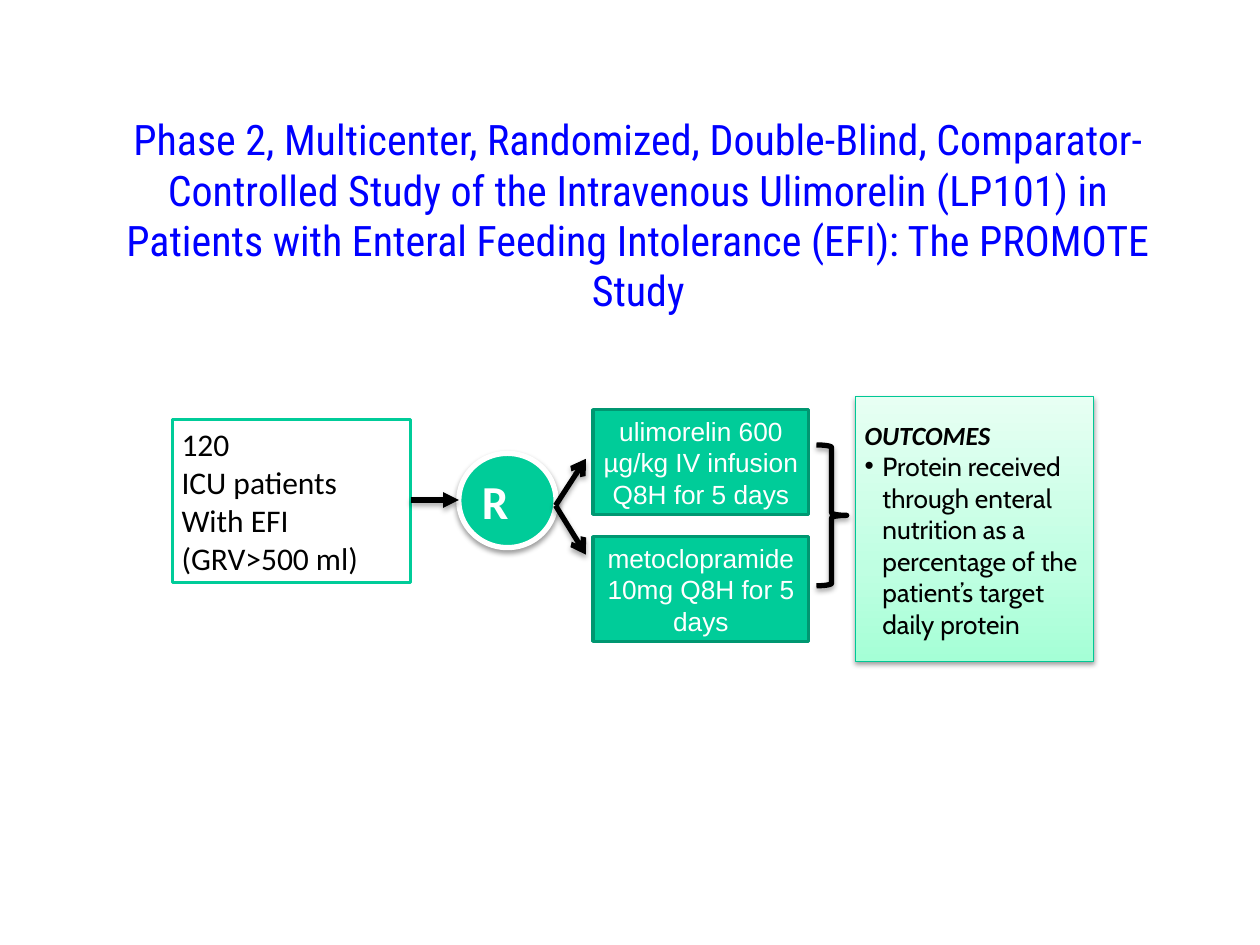
import pptx
import pptx.dml.color
import pptx.enum.shapes
import pptx.enum.text
import pptx.oxml
import pptx.oxml.ns
import pptx.util

Cm, Pt = pptx.util.Cm, pptx.util.Pt
SHAPE = pptx.enum.shapes.MSO_SHAPE
ALIGN = pptx.enum.text.PP_ALIGN
ANCHOR = pptx.enum.text.MSO_ANCHOR
qn = pptx.oxml.ns.qn
NAMESPACE = 'xmlns:a="http://schemas.openxmlformats.org/drawingml/2006/main"'

COLORS = {
    "title": "0000FF", "green": "00CC99", "dark green": "009771",
    "outcome line": "00C896", "black": "000000", "white": "FFFFFF",
}
OUTCOME_GRADIENT = [(0, "A5FFD6"), (35, "BFFFE2"), (100, "E7FFF3")]

# Content
TITLE = ("Phase 2, Multicenter, Randomized, Double-Blind, Comparator-Controlled "
         "Study of the Intravenous Ulimorelin (LP101) in Patients with Enteral "
         "Feeding Intolerance (EFI): The PROMOTE Study")
POPULATION = ["120", "ICU patients", "With EFI", "(GRV>500 ml)"]
ARMS = ["ulimorelin 600 µg/kg IV infusion Q8H for 5 days",
        "metoclopramide 10mg Q8H for 5 days"]
OUTCOMES = ["OUTCOMES",
            "Protein received through enteral nutrition as a percentage of "
            "the patient’s target daily protein"]

# Layout in centimetres: left, top, width, height
TITLE_BOX = (1.7, 2.16, 22.33, 5.51)
POPULATION_BOX = (3.48, 8.46, 4.8, 3.28)
RANDOM_CIRCLE = (9.25, 9.14, 1.96, 1.9)
FIRST_ARM_BOX = (11.96, 8.26, 4.34, 2.11)
ARM_STEP = 2.56
BRACE_BOX = (16.46, 8.97, 0.61, 2.84)
OUTCOME_BOX = (17.25, 8, 4.8, 5.33)
FORK = (11.2, 10.19)
ARROWS = [  # start, end, head
    (FORK, (11.81, 9.25), "arrow"),
    (FORK, (11.81, 11.18), "arrow"),
    ((8.28, 10.08), (9.25, 10.08), "triangle"),
]


def rgb(name):
    return pptx.dml.color.RGBColor.from_string(COLORS[name])


def add_shadow(properties, distance, opacity):
    effects = properties.find(qn("a:effectLst"))
    if effects is None:
        effects = pptx.oxml.parse_xml(f"<a:effectLst {NAMESPACE}/>")
        properties.append(effects)
    effects.append(pptx.oxml.parse_xml(
        f'<a:outerShdw {NAMESPACE} blurRad="{Pt(3.1)}" dist="{Pt(distance)}" '
        f'dir="5400000" rotWithShape="0"><a:srgbClr val="{COLORS["black"]}">'
        f'<a:alpha val="{opacity * 1000}"/></a:srgbClr></a:outerShdw>'))


def add_box(kind, box, fill, line, line_width):
    shape = slide.shapes.add_shape(kind, *map(Cm, box))
    shape.shadow.inherit = False
    if fill:
        shape.fill.solid()
        shape.fill.fore_color.rgb = rgb(fill)
    else:
        shape.fill.background()
    shape.line.color.rgb = rgb(line)
    shape.line.width = Pt(line_width)
    return shape


def write(shape, lines, size, color, font="Calibri", align=ALIGN.LEFT):
    frame = shape.text_frame
    frame.word_wrap = True
    frame.vertical_anchor = ANCHOR.MIDDLE
    frame.margin_left = frame.margin_right = Cm(0.18)
    frame.margin_top = frame.margin_bottom = Cm(0.1)
    frame.text = "\n".join(lines)
    for paragraph in frame.paragraphs:
        paragraph.alignment = align
        paragraph.font.size = Pt(size)
        paragraph.font.name = font
        paragraph.font.color.rgb = rgb(color)
    return frame.paragraphs


presentation = pptx.Presentation()
presentation.slide_width, presentation.slide_height = Cm(25.4), Cm(19.05)
slide = presentation.slides.add_slide(presentation.slide_layouts[5])

# Title
title = slide.shapes.title
title.left, title.top, title.width, title.height = map(Cm, TITLE_BOX)
write(title, [TITLE], 24, "title", "Roboto Condensed", ALIGN.CENTER)
title.text_frame.vertical_anchor = ANCHOR.TOP
title.text_frame.margin_left = title.text_frame.margin_right = Cm(0.25)
title.text_frame.margin_top = Cm(0.13)

# Study population
population = add_box(SHAPE.RECTANGLE, POPULATION_BOX, "white", "green", 2)
write(population, POPULATION, 18, "black")

# Randomization
circle = add_box(SHAPE.OVAL, RANDOM_CIRCLE, "green", "white", 3)
add_shadow(circle.element.spPr, 1.6, 38)
write(circle, ["R"], 27, "white")[0].font.bold = True

# Treatment arms
left, top, width, height = FIRST_ARM_BOX
for index, arm in enumerate(ARMS):
    arm_box = add_box(SHAPE.RECTANGLE, (left, top + index * ARM_STEP, width, height),
                      "green", "dark green", 2)
    write(arm_box, [arm], 15, "white", "Arial", ALIGN.CENTER)

# Brace joining the arms
brace = add_box(SHAPE.RIGHT_BRACE, BRACE_BOX, None, "black", 3)
add_shadow(brace.element.spPr, 1.8, 35)

# Outcomes
outcome = add_box(SHAPE.RECTANGLE, OUTCOME_BOX, "white", "outcome line", 0.75)
outcome.fill.gradient()
outcome.fill.gradient_angle = 90
stops = outcome.element.spPr.find(qn("a:gradFill")).find(qn("a:gsLst"))
for stop in list(stops):
    stops.remove(stop)
for position, color in OUTCOME_GRADIENT:
    stops.append(pptx.oxml.parse_xml(
        f'<a:gs {NAMESPACE} pos="{position * 1000}"><a:srgbClr val="{color}"/></a:gs>'))
add_shadow(outcome.element.spPr, 1.6, 38)
heading, measure = write(outcome, OUTCOMES, 15, "black")
heading.font.bold = heading.font.italic = True
measure.font.name = "Cabin"
measure_properties = measure._p.get_or_add_pPr()
measure_properties.set("marL", str(Cm(0.36)))
measure_properties.set("indent", str(-Cm(0.36)))
for position, bullet in enumerate(['<a:buFont {} typeface="Arial"/>',
                                   '<a:buChar {} char="•"/>']):
    measure_properties.insert(position, pptx.oxml.parse_xml(bullet.format(NAMESPACE)))

# Arrows
for start, end, head in ARROWS:
    arrow = slide.shapes.add_connector(pptx.enum.shapes.MSO_CONNECTOR.STRAIGHT,
                                       *map(Cm, start + end))
    arrow.line.color.rgb = rgb("black")
    arrow.line.width = Pt(3)
    arrow.line._get_or_add_ln().append(
        pptx.oxml.parse_xml(f'<a:tailEnd {NAMESPACE} type="{head}"/>'))
    add_shadow(arrow.element.spPr, 1.8, 35)

presentation.save("out.pptx")
